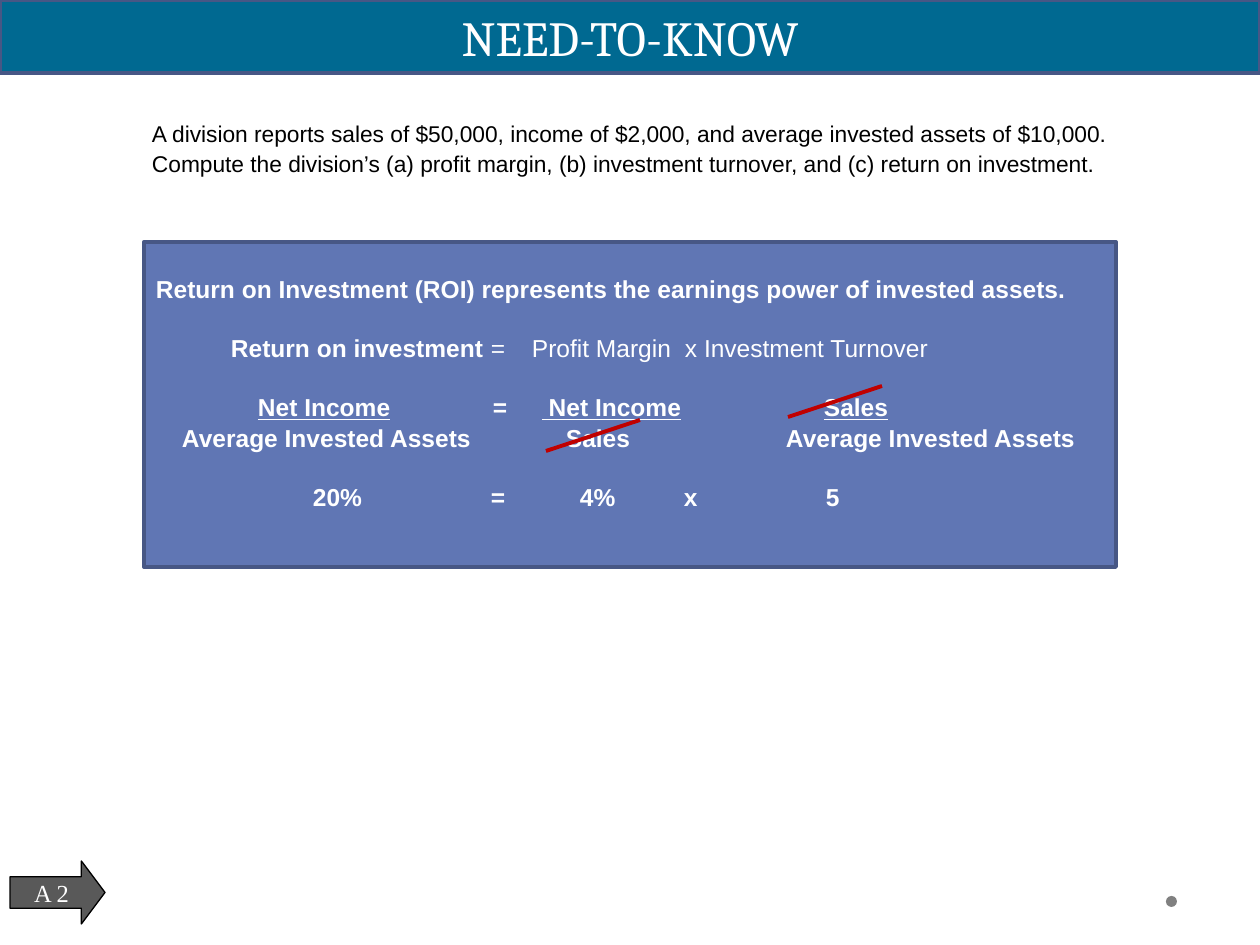
"""Build the return-on-investment practice slide."""
import pptx
import pptx.dml.color
import pptx.enum.shapes
import pptx.enum.text
import pptx.oxml.ns
import pptx.util
from lxml import etree

RGBColor = pptx.dml.color.RGBColor
Shape = pptx.enum.shapes.MSO_SHAPE
Align = pptx.enum.text.PP_ALIGN
Anchor = pptx.enum.text.MSO_ANCHOR
Pt = pptx.util.Pt
qn = pptx.oxml.ns.qn

WHITE = RGBColor(0xFF, 0xFF, 0xFF)
BLACK = RGBColor(0, 0, 0)
TEAL = RGBColor(0x00, 0x69, 0x91)
BLUE = RGBColor(0x60, 0x76, 0xB4)
NAVY = RGBColor(0x47, 0x57, 0x85)
RED = RGBColor(0xC0, 0, 0)
DARK_GRAY = RGBColor(0x59, 0x59, 0x59)
GRAY = RGBColor(0x80, 0x80, 0x80)

PX_PER_INCH = 126
PANEL_LEFT = 144
PANEL_INSET = 12

PROBLEM = (
    "A division reports sales of $50,000, income of $2,000, and average invested assets of $10,000.",
    "Compute the division’s (a) profit margin, (b) investment turnover, and (c) return on investment.",
)

# Each row: space before in points, then (left px, text, style) with b = bold, u = underlined.
ROI_ROWS = (
    (0, ((156, "Return on Investment (ROI) represents the earnings power of invested assets.", "b"),)),
    (17, ((231, "Return on investment", "b"), (491, "=", ""),
          (532, "Profit Margin", ""), (685, "x Investment Turnover", ""))),
    (17, ((258, "Net Income", "bu"), (493, "=", "b"), (542, " Net Income", "bu"), (824, "Sales", "bu"))),
    (0.5, ((182, "Average Invested Assets", "b"), (566, "Sales", "b"), (786, "Average Invested Assets", "b"))),
    (17, ((313, "20%", "b"), (491, "=", "b"), (580, "4%", "b"), (684, "x", "b"), (826, "5", "b"))),
)


def px(length):
    """Turn pixels into EMU."""
    return pptx.util.Emu(round(length * 914400 / PX_PER_INCH))


def place(shape, left, top, width, height):
    """Move and size a shape."""
    shape.left, shape.top, shape.width, shape.height = map(px, (left, top, width, height))


def paint(shape, fill, line=None, weight=2.25):
    """Set the fill and outline of a shape."""
    shape.fill.solid()
    shape.fill.fore_color.rgb = fill
    if line is None:
        shape.line.fill.background()
    else:
        shape.line.color.rgb = line
        shape.line.width = Pt(weight)


def style(font, name, size, color, bold=False, underline=False):
    """Set the look of a font."""
    font.name, font.size, font.bold, font.underline = name, Pt(size), bold, underline
    font.color.rgb = color


def set_margins(frame, left=0, top=0, right=0, bottom=0):
    """Set the insets of a text frame."""
    frame.margin_left, frame.margin_top = px(left), px(top)
    frame.margin_right, frame.margin_bottom = px(right), px(bottom)


def add_shape(page, kind, bounds, fill, line=None, weight=2.25):
    """Add a painted preset shape without a shadow."""
    shape = page.shapes.add_shape(kind, *map(px, bounds))
    shape.shadow.inherit = False
    paint(shape, fill, line, weight)
    return shape


def fill_title(title):
    """Turn the title placeholder into the top banner."""
    place(title, 0, 0, 1260, 73)
    paint(title, TEAL, NAVY)
    frame = title.text_frame
    frame.text = "NEED-TO-KNOW"
    frame.auto_size = pptx.enum.text.MSO_AUTO_SIZE.NONE
    frame.vertical_anchor = Anchor.MIDDLE
    frame.paragraphs[0].alignment = Align.CENTER
    style(frame.paragraphs[0].runs[0].font, "Cambria", 28, WHITE)


def fill_problem(body):
    """Write the problem statement in the body placeholder."""
    place(body, 152, 120, 1006, 60)
    frame = body.text_frame
    frame.text = "\n".join(PROBLEM)
    frame.auto_size = pptx.enum.text.MSO_AUTO_SIZE.NONE
    set_margins(frame)
    for index, para in enumerate(frame.paragraphs):
        para.space_before = Pt(1.5 * index)
        properties = para._p.get_or_add_pPr()
        properties.set("marL", "0")
        properties.set("indent", "0")
        etree.SubElement(properties, qn("a:buNone"))
        style(para.runs[0].font, "Arial", 13, BLACK)


def fill_row(para, gap, cells):
    """Write one row of the panel, each cell at its own tab stop."""
    para.alignment = Align.LEFT
    para.space_before = Pt(gap)
    tabs = etree.SubElement(para._p.get_or_add_pPr(), qn("a:tabLst"))
    for left, text, look in cells:
        offset = left - PANEL_LEFT - PANEL_INSET
        if offset:
            etree.SubElement(tabs, qn("a:tab"), pos=str(px(offset)), algn="l")
            tab = para.add_run()
            tab.text = "\t"
            style(tab.font, "Arial", 14, WHITE)
        span = para.add_run()
        span.text = text
        style(span.font, "Arial", 14, WHITE, "b" in look, "u" in look)


def add_roi_panel(page):
    """Add the blue panel with the return-on-investment working."""
    box = add_shape(page, Shape.RECTANGLE, (PANEL_LEFT, 242, 972, 325), BLUE, NAVY)
    frame = box.text_frame
    frame.word_wrap = True
    frame.vertical_anchor = Anchor.TOP
    set_margins(frame, PANEL_INSET, 32, PANEL_INSET)
    for index, (gap, cells) in enumerate(ROI_ROWS):
        para = frame.add_paragraph() if index else frame.paragraphs[0]
        fill_row(para, gap, cells)


def add_strike(page, left, bottom):
    """Add a red line that cancels a term."""
    line = page.shapes.add_connector(
        pptx.enum.shapes.MSO_CONNECTOR.STRAIGHT, px(left), px(bottom), px(left + 94), px(bottom - 31))
    line.line.color.rgb = RED
    line.line.width = Pt(2.25)
    etree.SubElement(line._element.spPr, qn("a:effectLst"))


def add_objective_arrow(page):
    """Add the arrow that names the learning objective."""
    arrow = add_shape(page, Shape.RIGHT_ARROW, (10, 861, 95, 63), DARK_GRAY, BLACK, 0.75)
    arrow.adjustments[0] = 0.5
    arrow.adjustments[1] = 0.375
    frame = arrow.text_frame
    frame.text = "A 2"
    frame.word_wrap = False
    frame.vertical_anchor = Anchor.MIDDLE
    frame.paragraphs[0].alignment = Align.CENTER
    style(frame.paragraphs[0].runs[0].font, "Times New Roman", 14, WHITE)


def main():
    """Build and save the deck."""
    deck = pptx.Presentation()
    deck.slide_width, deck.slide_height = px(1260), px(945)
    page = deck.slides.add_slide(deck.slide_layouts[1])
    fill_title(page.shapes.title)
    fill_problem(page.placeholders[1])
    add_shape(page, Shape.OVAL, (1166, 896, 11, 11), GRAY)
    add_roi_panel(page)
    add_strike(page, 546, 451)
    add_strike(page, 788, 417)
    add_objective_arrow(page)
    deck.save("out.pptx")


if __name__ == "__main__":
    main()
